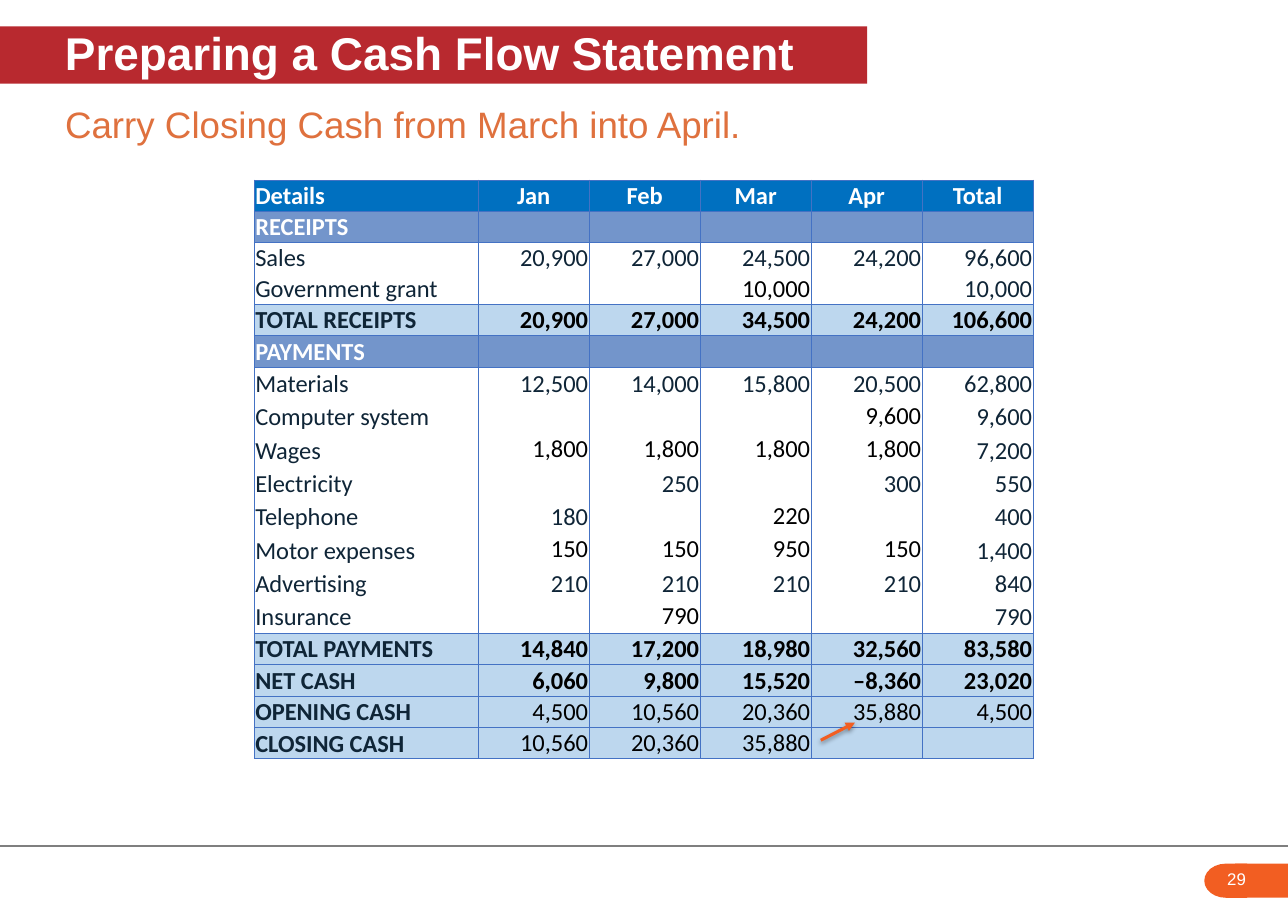
from dataclasses import dataclass
from typing import Any, NamedTuple

from lxml import etree
from pptx import Presentation
from pptx.dml.color import RGBColor
from pptx.enum.shapes import MSO_CONNECTOR, MSO_SHAPE
from pptx.enum.text import MSO_ANCHOR, PP_ALIGN
from pptx.oxml.ns import qn
from pptx.util import Emu, Pt

EMU_PER_PX = 2286  # 400 px to the inch
RECTANGLE, DELAY = MSO_SHAPE.RECTANGLE, MSO_SHAPE.FLOWCHART_DELAY
STRAIGHT = MSO_CONNECTOR.STRAIGHT
TOP, MIDDLE = MSO_ANCHOR.TOP, MSO_ANCHOR.MIDDLE
LEFT, CENTER, RIGHT = PP_ALIGN.LEFT, PP_ALIGN.CENTER, PP_ALIGN.RIGHT


@dataclass(frozen=True)
class Theme:
    heading_font: str = "Arial"
    table_font: str = "Calibri"
    title_size: int = 30
    subtitle_size: int = 24
    table_size: int = 16
    number_size: int = 11
    white: str = "FFFFFF"
    black: str = "000000"
    navy: str = "0F2537"
    red: str = "B8292F"
    rust: str = "DF713E"
    orange: str = "F25E22"
    grey: str = "7F7F7F"
    header_blue: str = "0070C0"
    section_blue: str = "7395CB"
    total_blue: str = "BDD7EE"
    border_blue: str = "4472C4"


THEME = Theme()


class Area(NamedTuple):
    left: int
    top: int
    width: int
    height: int


class Type(NamedTuple):
    font: str
    size: int
    color: str
    bold: bool = False


@dataclass(frozen=True)
class RowStyle:
    fill: str
    label_color: str
    label_bold: bool = True
    value_bold: bool = True
    value_align: PP_ALIGN = RIGHT
    height: int = 114


@dataclass(frozen=True)
class Row:
    """One table row; the columns numbered in entered are black and sit at the top."""
    style: RowStyle
    label: str
    values: tuple[str, ...] = ("",) * 5
    entered: tuple[int, ...] = ()


HEADER = RowStyle(THEME.header_blue, THEME.white, value_align=CENTER)
SECTION = RowStyle(THEME.section_blue, THEME.white)
RECEIPT = RowStyle(THEME.white, THEME.navy, False, False, height=112)
PAYMENT = RowStyle(THEME.white, THEME.navy, False, False, height=121)
TOTAL = RowStyle(THEME.total_blue, THEME.navy)
BALANCE = RowStyle(THEME.total_blue, THEME.navy, value_bold=False)
DETAILS = (RECEIPT, PAYMENT)
MONTHS = (1, 2, 3, 4)
ALL = (1, 2, 3, 4, 5)

ROWS = [
    Row(HEADER, "Details", ("Jan", "Feb", "Mar", "Apr", "Total")),
    Row(SECTION, "RECEIPTS"),
    Row(RECEIPT, "Sales", ("20,900", "27,000", "24,500", "24,200", "96,600")),
    Row(RECEIPT, "Government grant", ("", "", "10,000", "", "10,000"), (3,)),
    Row(TOTAL, "TOTAL RECEIPTS", ("20,900", "27,000", "34,500", "24,200", "106,600"), ALL),
    Row(SECTION, "PAYMENTS"),
    Row(PAYMENT, "Materials", ("12,500", "14,000", "15,800", "20,500", "62,800")),
    Row(PAYMENT, "Computer system", ("", "", "", "9,600", "9,600"), (4,)),
    Row(PAYMENT, "Wages", ("1,800", "1,800", "1,800", "1,800", "7,200"), MONTHS),
    Row(PAYMENT, "Electricity", ("", "250", "", "300", "550")),
    Row(PAYMENT, "Telephone", ("180", "", "220", "", "400"), (3,)),
    Row(PAYMENT, "Motor expenses", ("150", "150", "950", "150", "1,400"), MONTHS),
    Row(PAYMENT, "Advertising", ("210", "210", "210", "210", "840")),
    Row(PAYMENT, "Insurance", ("", "790", "", "", "790"), (2,)),
    Row(TOTAL, "TOTAL PAYMENTS", ("14,840", "17,200", "18,980", "32,560", "83,580"), ALL),
    Row(TOTAL, "NET CASH", ("6,060", "9,800", "15,520", "–8,360", "23,020"), ALL),
    Row(BALANCE, "OPENING CASH", ("4,500", "10,560", "20,360", "35,880", "4,500"), ALL),
    Row(BALANCE, "CLOSING CASH", ("10,560", "20,360", "35,880", "", ""), ALL),
]
COLUMN_WIDTHS = (813,) + (403,) * 5


def px(length: int) -> Emu:
    return Emu(length * EMU_PER_PX)


def set_all(target: Any, formats: dict[str, Any]) -> None:
    for name, value in formats.items():
        setattr(target, name, value)


def paint(target: Any, color: str) -> None:
    target.fill.solid()
    target.fill.fore_color.rgb = RGBColor.from_string(color)


def write(para: Any, text: str, style: Type, align: PP_ALIGN = LEFT) -> None:
    para.alignment = align
    if not text:  # keeps an empty cell from growing to the default size
        etree.SubElement(para._p, qn("a:endParaRPr"), sz=str(style.size * 100))
        return
    span = para.add_run()
    span.text = text
    set_all(span.font, {"name": style.font, "size": Pt(style.size), "bold": style.bold})
    span.font.color.rgb = RGBColor.from_string(style.color)


def add_block(page: Any, kind: MSO_SHAPE, area: Area, color: str) -> Any:
    block = page.shapes.add_shape(kind, *map(px, area))
    block.shadow.inherit = False
    paint(block, color)
    block.line.fill.background()
    return block


def add_heading(box: Any, text: str, style: Type) -> None:
    set_all(box.text_frame, {
        "word_wrap": True, "vertical_anchor": MIDDLE, "margin_left": px(236),
        "margin_top": 0, "margin_right": 0, "margin_bottom": px(20)})
    write(box.text_frame.paragraphs[0], text, style)


def add_line(page: Any, ends: tuple[int, int, int, int], color: str, points: float) -> Any:
    line = page.shapes.add_connector(STRAIGHT, *map(px, ends))
    line.line.color.rgb = RGBColor.from_string(color)
    line.line.width = Pt(points)
    etree.SubElement(line._element.spPr, qn("a:effectLst"))
    return line


def add_arrow(page: Any, ends: tuple[int, int, int, int]) -> None:
    properties = add_line(page, ends, THEME.orange, 2)._element.spPr
    etree.SubElement(properties.find(qn("a:ln")), qn("a:tailEnd"), type="triangle")
    shadow = etree.SubElement(properties.find(qn("a:effectLst")), qn("a:outerShdw"),
                              blurRad="39370", dist="20320", dir="5400000", rotWithShape="0")
    tint = etree.SubElement(shadow, qn("a:srgbClr"), val=THEME.black)
    etree.SubElement(tint, qn("a:alpha"), val="38000")


def add_borders(cell: Any, sides: str) -> None:
    """Rule the sides named by their letters and clear the rest."""
    for side in "LRTB":
        border = etree.SubElement(cell._tc.get_or_add_tcPr(), qn(f"a:ln{side}"), w=str(Pt(0.5)))
        if side in sides:
            solid = etree.SubElement(border, qn("a:solidFill"))
            etree.SubElement(solid, qn("a:srgbClr"), val=THEME.border_blue)
        else:
            etree.SubElement(border, qn("a:noFill"))


def add_cash_table(page: Any, left: int, top: int) -> None:
    area = Area(left, top, sum(COLUMN_WIDTHS), sum(row.style.height for row in ROWS))
    table = page.shapes.add_table(len(ROWS), len(COLUMN_WIDTHS), *map(px, area)).table
    set_all(table, {"first_row": False, "horz_banding": False})
    for column, width in zip(table.columns, COLUMN_WIDTHS):
        column.width = px(width)
    for index, row in enumerate(ROWS):
        style = row.style
        table.rows[index].height = px(style.height)
        is_detail = style in DETAILS
        joins_above = is_detail and ROWS[index - 1].style == style
        joins_below = is_detail and ROWS[index + 1].style == style
        sides = "LR" + ("" if joins_above else "T") + ("" if joins_below else "B")
        for number, text in enumerate((row.label, *row.values)):
            cell = table.cell(index, number)
            entered = number in row.entered
            set_all(cell, {"margin_left": px(4), "margin_top": px(4), "margin_right": px(4),
                           "margin_bottom": 0, "vertical_anchor": TOP if entered else MIDDLE})
            add_borders(cell, sides)
            paint(cell, style.fill)
            color = THEME.black if entered else style.label_color
            bold = style.value_bold if number else style.label_bold
            write(cell.text_frame.paragraphs[0], text,
                  Type(THEME.table_font, THEME.table_size, color, bold),
                  style.value_align if number else LEFT)


def main() -> None:
    deck = Presentation()
    set_all(deck, {"slide_width": px(4676), "slide_height": px(3308)})
    page = deck.slides.add_slide(deck.slide_layouts[6])
    add_line(page, (0, 3072, 4676, 3072), THEME.grey, 0.75)
    add_block(page, DELAY, Area(4372, 3136, 156, 124), THEME.orange).rotation = 180
    add_block(page, RECTANGLE, Area(4484, 3136, 192, 124), THEME.orange)
    number_box = page.shapes.add_textbox(*map(px, Area(4416, 3136, 224, 112)))
    number_box.text_frame.word_wrap = True
    write(number_box.text_frame.paragraphs[0], "29",
          Type(THEME.heading_font, THEME.number_size, THEME.white))
    add_heading(page.shapes.add_textbox(*map(px, Area(0, 356, 4676, 204))),
                "Carry Closing Cash from March into April.",
                Type(THEME.heading_font, THEME.subtitle_size, THEME.rust))
    add_heading(add_block(page, RECTANGLE, Area(0, 96, 3148, 208), THEME.red),
                "Preparing a Cash Flow Statement",
                Type(THEME.heading_font, THEME.title_size, THEME.white, True))
    add_cash_table(page, 923, 653)
    add_arrow(page, (2980, 2688, 3104, 2624))
    deck.save("out.pptx")


if __name__ == "__main__":
    main()
